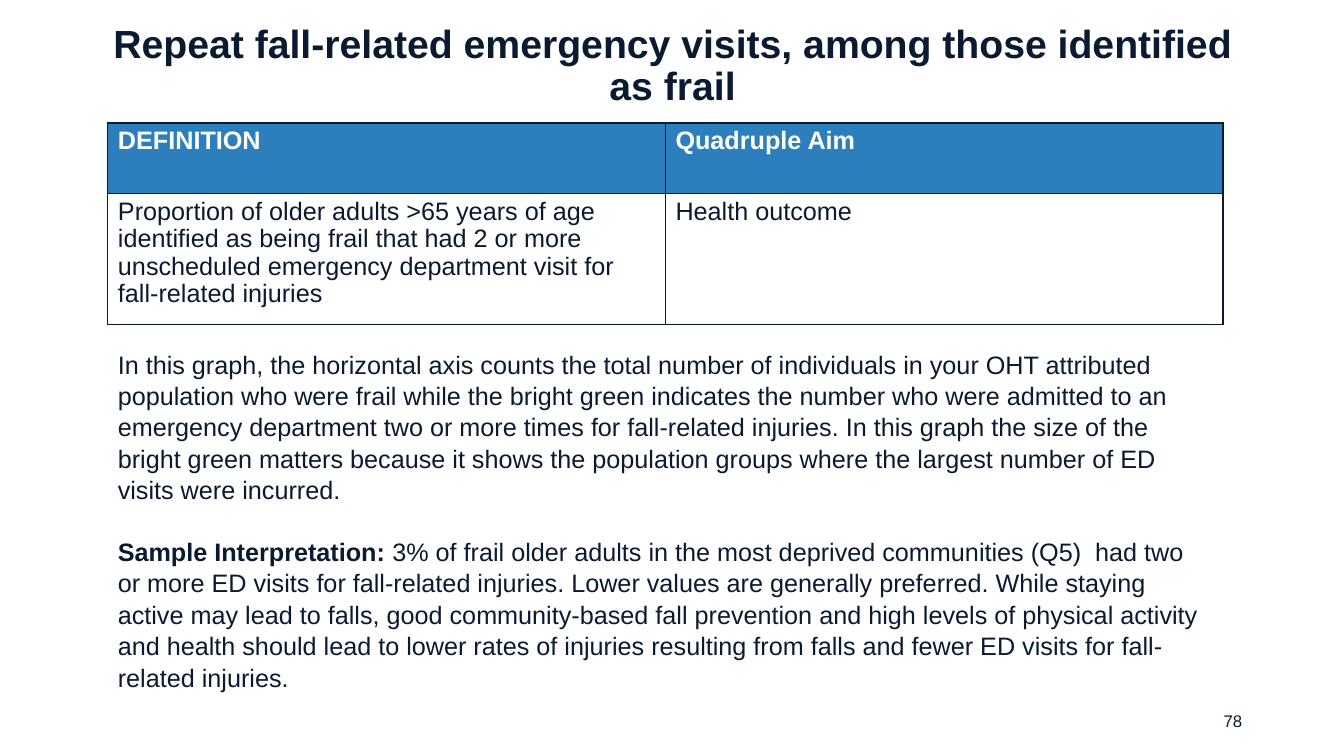
from dataclasses import dataclass

from lxml.etree import SubElement
from pptx import Presentation
from pptx.dml.color import RGBColor
from pptx.enum.text import MSO_ANCHOR, MSO_AUTO_SIZE, PP_ALIGN
from pptx.oxml.ns import qn
from pptx.util import Inches, Pt

# Content
TITLE = "Repeat fall-related emergency visits, among those identified as frail"
TABLE_ROWS = [
    ("DEFINITION", "Quadruple Aim"),
    ("Proportion of older adults >65 years of age identified as being frail that had "
     "2 or more unscheduled emergency department visit for fall-related injuries",
     "Health outcome"),
]
# Each paragraph is a list of (text, bold) runs
BODY = [
    [("In this graph, the horizontal axis counts the total number of individuals "
      "in your OHT attributed population who were frail while the bright green "
      "indicates the number who were admitted to an emergency department two or more "
      "times for fall-related injuries. In this graph the size of the bright green "
      "matters because it shows the population groups where the largest number of "
      "ED visits were incurred.", False)],
    [("Sample Interpretation: ", True),
     ("3% of frail older adults in the most deprived communities (Q5)  had two or more "
      "ED visits for fall-related injuries. Lower values are generally preferred. While "
      "staying active may lead to falls, good community-based fall prevention and high "
      "levels of physical activity and health should lead to lower rates of injuries "
      "resulting from falls and fewer ED visits for fall-related injuries.", False)],
]
PAGE_NUMBER = "78"


@dataclass(frozen=True)
class Theme:
    font: str = "Arial"
    ink: str = "0A1A31"
    header: str = "2C7FBC"
    paper: str = "FFFFFF"
    title_size: int = 28
    body_size: int = 18
    number_size: int = 12
    border: int = 1


theme = Theme()

# Layout in inches
SLIDE_WIDTH, SLIDE_HEIGHT = 13.33, 7.5
LEFT, CONTENT_WIDTH = 1.07, 11.06
TABLE_TOP, ROW_HEIGHTS = 1.22, (0.7, 1.3)
TITLE_BOX = (0.77, 0.24, 11.8, 0.84)
BODY_BOX = (LEFT, 3.4, CONTENT_WIDTH, 3.43)
NUMBER_BOX = (9.42, 6.95, 3, 0.4)


def format_paragraph(paragraph, size, color=theme.ink, bold=False,
                     align=PP_ALIGN.LEFT, spacing=1.0):
    paragraph.alignment = align
    paragraph.line_spacing = spacing
    paragraph.space_before = Pt(0)
    for run in paragraph.runs:
        run.font.name = theme.font
        run.font.size = Pt(size)
        run.font.bold = bold
        run.font.color.rgb = RGBColor.from_string(color)


def add_borders(cell):
    properties = cell._tc.get_or_add_tcPr()
    for index, side in enumerate(("a:lnL", "a:lnR", "a:lnT", "a:lnB")):
        line = properties.makeelement(qn(side), {"w": str(Pt(theme.border))})
        fill = SubElement(line, qn("a:solidFill"))
        SubElement(fill, qn("a:srgbClr"), val=theme.ink)
        properties.insert(index, line)


def add_text_box(slide, box):
    text_frame = slide.shapes.add_textbox(*map(Inches, box)).text_frame
    text_frame.word_wrap = True
    return text_frame


def add_title(slide):
    title = slide.shapes.title
    title.left, title.top, title.width, title.height = map(Inches, TITLE_BOX)
    text_frame = title.text_frame
    text_frame.text = TITLE
    text_frame.word_wrap = True
    text_frame.auto_size = MSO_AUTO_SIZE.NONE
    text_frame.vertical_anchor = MSO_ANCHOR.MIDDLE
    format_paragraph(text_frame.paragraphs[0], theme.title_size, bold=True,
                     align=PP_ALIGN.CENTER, spacing=0.9)


def add_definition_table(slide):
    table = slide.shapes.add_table(
        len(TABLE_ROWS), len(TABLE_ROWS[0]), Inches(LEFT), Inches(TABLE_TOP),
        Inches(CONTENT_WIDTH), Inches(sum(ROW_HEIGHTS))).table
    for row_index, (texts, height) in enumerate(zip(TABLE_ROWS, ROW_HEIGHTS)):
        is_header = row_index == 0
        table.rows[row_index].height = Inches(height)
        for column_index, text in enumerate(texts):
            cell = table.cell(row_index, column_index)
            cell.text_frame.text = text
            format_paragraph(cell.text_frame.paragraphs[0], theme.body_size,
                             theme.paper if is_header else theme.ink,
                             bold=is_header, spacing=0.97)
            cell.fill.solid()
            cell.fill.fore_color.rgb = RGBColor.from_string(
                theme.header if is_header else theme.paper)
            add_borders(cell)


def add_body(slide):
    text_frame = add_text_box(slide, BODY_BOX)
    for index, runs in enumerate(BODY):
        paragraph = text_frame.add_paragraph() if index else text_frame.paragraphs[0]
        for text, _ in runs:
            paragraph.add_run().text = text
        format_paragraph(paragraph, theme.body_size, spacing=1.04)
        for run, (_, bold) in zip(paragraph.runs, runs):
            run.font.bold = bold
        if index:
            paragraph.space_before = Pt(1.2 * theme.body_size)


def add_page_number(slide):
    text_frame = add_text_box(slide, NUMBER_BOX)
    text_frame.text = PAGE_NUMBER
    text_frame.vertical_anchor = MSO_ANCHOR.MIDDLE
    format_paragraph(text_frame.paragraphs[0], theme.number_size, align=PP_ALIGN.RIGHT)


def main():
    presentation = Presentation()
    presentation.slide_width = Inches(SLIDE_WIDTH)
    presentation.slide_height = Inches(SLIDE_HEIGHT)
    slide = presentation.slides.add_slide(presentation.slide_layouts[5])
    add_title(slide)
    add_definition_table(slide)
    add_body(slide)
    add_page_number(slide)
    presentation.save("out.pptx")


if __name__ == "__main__":
    main()
